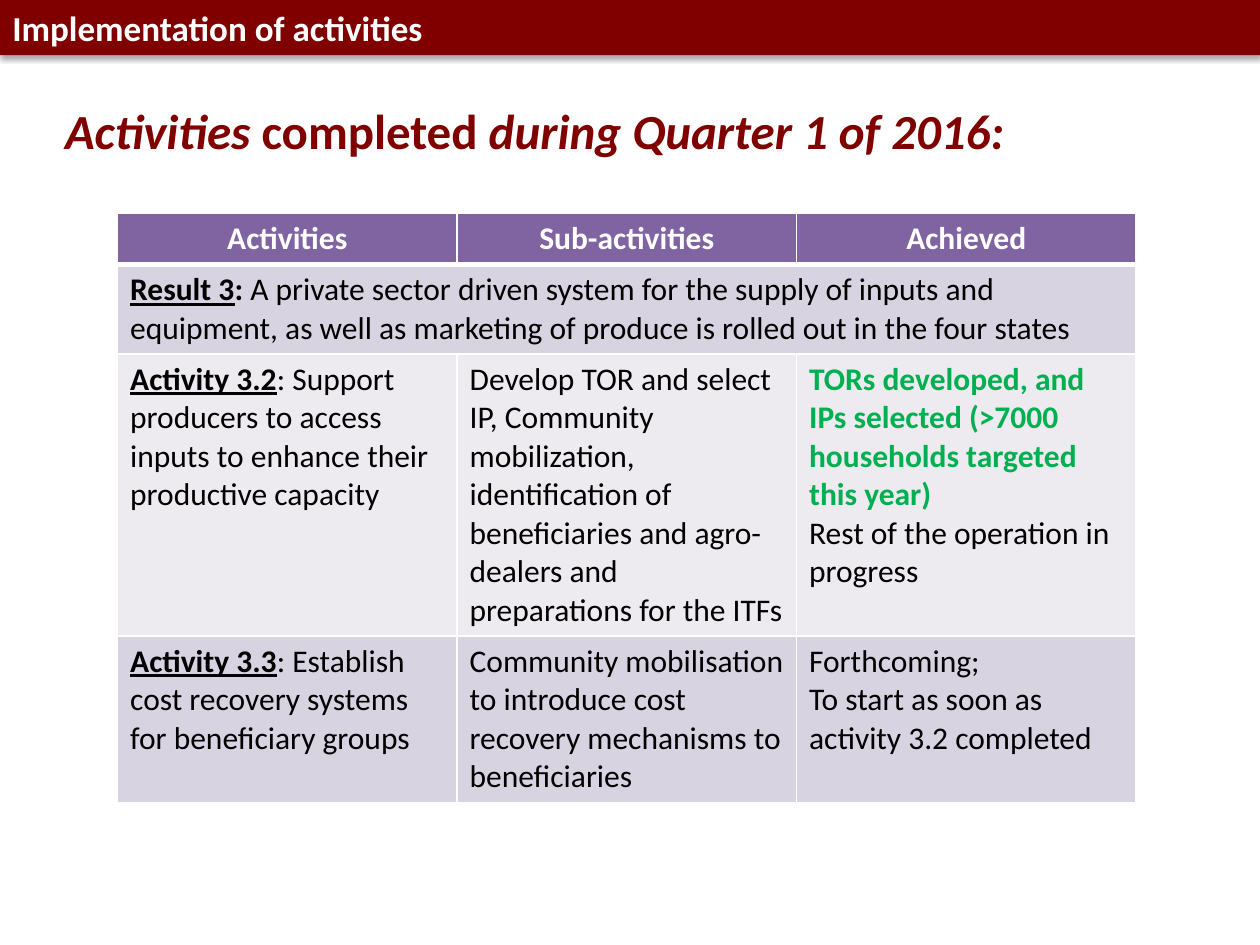
from lxml import etree
from pptx import Presentation
from pptx.dml.color import RGBColor
from pptx.enum import shapes, text
from pptx.oxml import ns
from pptx.util import Pt

MAROON, WHITE, BLACK, GREEN = "800000", "FFFFFF", "000000", "00B050"
PURPLE, LILAC, PALE = "8064A2", "D8D3E0", "EDEAF0"
LABEL = {"bold": True, "underline": True}
ROW_HEIGHTS = [29.2, 50.5, 158.3, 93]
HEADINGS = ["Activities", "Sub-activities", "Achieved"]
RESULT = [[("Result 3", LABEL), (":", {"bold": True}),
           (" A private sector driven system for the supply of inputs and equipment, "
            "as well as marketing of produce is rolled out in the four states", {})]]
ACTIVITIES = [
    [
        [[("Activity 3.2", LABEL),
          (": Support producers to access inputs to enhance their productive capacity", {})]],
        [[("Develop TOR and select IP, Community mobilization, identification of "
           "beneficiaries and agro-dealers and preparations for the ITFs", {})]],
        [[("TORs developed, and IPs selected (>7000 households targeted this year)",
           {"bold": True, "color": GREEN})],
         [("Rest of the operation in progress", {})]],
    ],
    [
        [[("Activity 3.3", LABEL),
          (": Establish cost recovery systems for beneficiary groups", {})]],
        [[("Community mobilisation to introduce cost recovery mechanisms to beneficiaries", {})]],
        [[("Forthcoming;", {})],
         [("To start as soon as activity 3.2 completed", {})]],
    ],
]


def rgb(value):
    """Turn a hex string into a colour."""
    return RGBColor.from_string(value)


def set_all(target, values):
    """Set each named attribute on the target."""
    for name, value in values.items():
        setattr(target, name, value)


def add_node(parent, tag, **attributes):
    """Append a DrawingML element to its parent."""
    return etree.SubElement(parent, ns.qn(tag), attributes)


def write(frame, paragraphs, align=text.PP_ALIGN.LEFT, **base):
    """Fill a text frame with paragraphs of formatted runs."""
    for index, pieces in enumerate(paragraphs):
        paragraph = frame.add_paragraph() if index else frame.paragraphs[0]
        paragraph.alignment = align
        for words, changes in pieces:
            style = {"name": "Calibri", "bold": False, **base, **changes}
            color = style.pop("color")
            run = paragraph.add_run()
            run.text = words
            set_all(run.font, style)
            run.font.color.rgb = rgb(color)


def place_heading(slide, left, top, width, height):
    """Place the slide title in its box."""
    heading = slide.shapes.title
    set_all(heading, {"left": left, "top": top, "width": width, "height": height})
    set_all(heading.text_frame, {"word_wrap": True, "auto_size": text.MSO_AUTO_SIZE.NONE,
                                 "vertical_anchor": text.MSO_ANCHOR.TOP})
    write(heading.text_frame,
          [[("Activities ", {}), ("completed", {"italic": False}),
            (" during Quarter 1 of 2016:", {})]],
          size=Pt(28), bold=True, italic=True, color=MAROON)


def place_banner(slide, left, top, width, height):
    """Draw the section banner with its soft shadow."""
    banner = slide.shapes.add_shape(shapes.MSO_SHAPE.RECTANGLE, left, top, width, height)
    banner.fill.solid()
    banner.fill.fore_color.rgb = rgb(MAROON)
    banner.line.fill.background()
    banner.shadow.inherit = False
    effects = banner.element.spPr.find(ns.qn("a:effectLst"))
    shadow = add_node(effects, "a:outerShdw", blurRad=str(Pt(3.1)), dist=str(Pt(1.8)),
                      dir="5400000", rotWithShape="0")
    add_node(add_node(shadow, "a:srgbClr", val=BLACK), "a:alpha", val="35000")
    set_all(banner.text_frame, {"word_wrap": True, "vertical_anchor": text.MSO_ANCHOR.MIDDLE})
    write(banner.text_frame, [[("Implementation of activities", {})]],
          size=Pt(20), bold=True, color=WHITE)


def style_cell(cell, fill, top=1, bottom=1):
    """Give a cell white borders and a solid fill."""
    properties = cell._tc.get_or_add_tcPr()
    for side, weight in {"L": 1, "R": 1, "T": top, "B": bottom}.items():
        border = add_node(properties, f"a:ln{side}", w=str(Pt(weight)))
        add_node(add_node(border, "a:solidFill"), "a:srgbClr", val=WHITE)
    cell.fill.solid()
    cell.fill.fore_color.rgb = rgb(fill)


def place_activities(slide, left, top, width):
    """Build the table of activities and their progress."""
    table = slide.shapes.add_table(len(ROW_HEIGHTS), len(HEADINGS), left, top, width,
                                   Pt(sum(ROW_HEIGHTS))).table
    for row, height in zip(table.rows, ROW_HEIGHTS):
        row.height = Pt(height)
    for column, heading in enumerate(HEADINGS):
        header = table.cell(0, column)
        style_cell(header, PURPLE, bottom=3)
        write(header.text_frame, [[(heading, {})]], text.PP_ALIGN.CENTER,
              size=Pt(18), bold=True, color=WHITE)
        style_cell(table.cell(1, column), LILAC, top=3)
    result = table.cell(1, 0)
    result.merge(table.cell(1, len(HEADINGS) - 1))
    write(result.text_frame, RESULT, size=Pt(18), color=BLACK)
    for row, (activity, fill) in enumerate(zip(ACTIVITIES, [PALE, LILAC]), start=2):
        for column, paragraphs in enumerate(activity):
            cell = table.cell(row, column)
            style_cell(cell, fill)
            write(cell.text_frame, paragraphs, size=Pt(18), color=BLACK)


def main():
    """Build and save the slide."""
    deck = Presentation()
    set_all(deck, {"slide_width": Pt(720), "slide_height": Pt(540)})
    slide = deck.slides.add_slide(deck.slide_layouts[5])
    place_heading(slide, Pt(30), Pt(54), Pt(564), Pt(41))
    place_banner(slide, Pt(0), Pt(0), Pt(720), Pt(31.5))
    place_activities(slide, Pt(67.2), Pt(122), Pt(582))
    deck.save("out.pptx")


if __name__ == "__main__":
    main()
